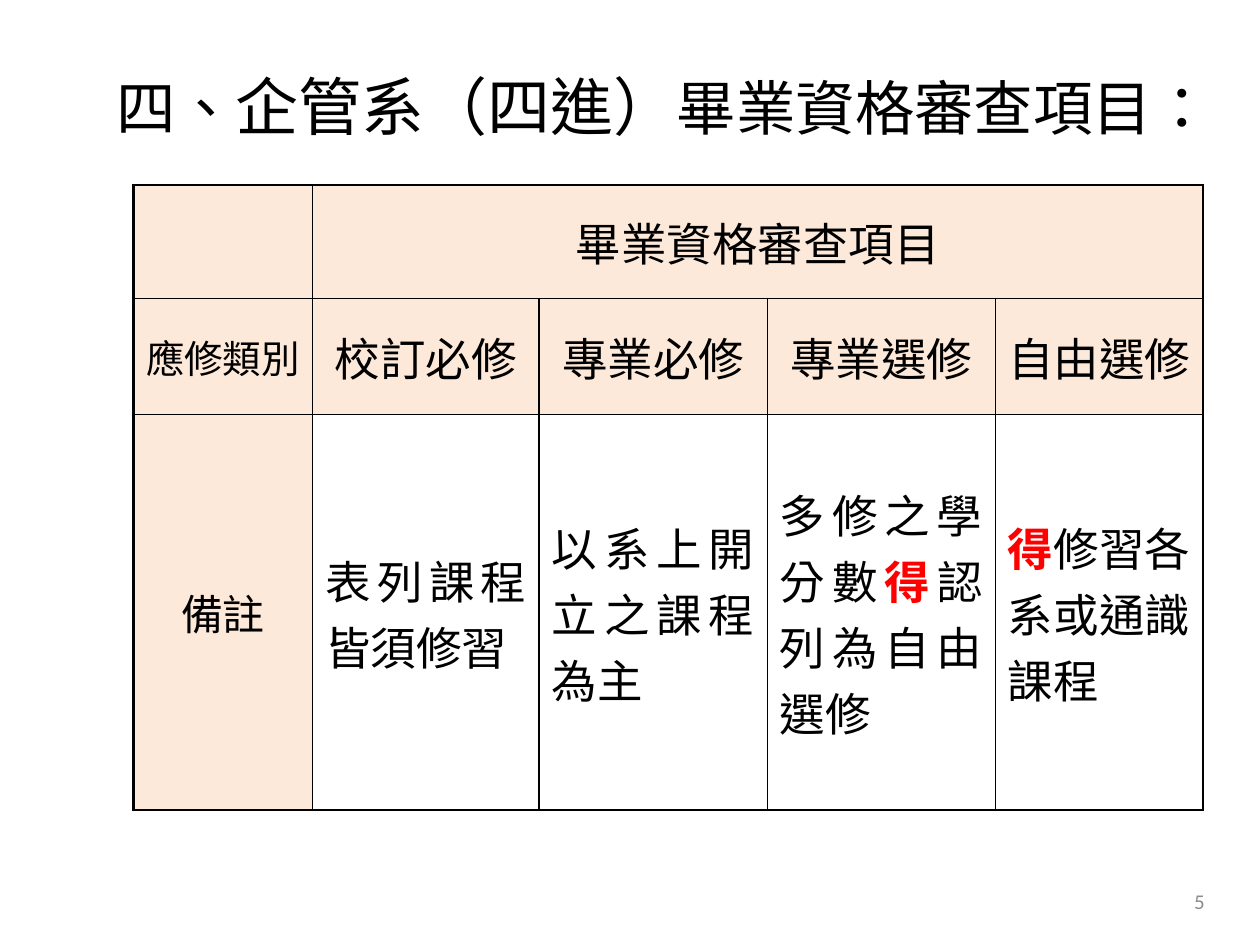
from dataclasses import dataclass

from lxml import etree
from pptx import Presentation
from pptx.dml.color import RGBColor
from pptx.enum.lang import MSO_LANGUAGE_ID
from pptx.enum.text import MSO_ANCHOR, PP_ALIGN
from pptx.oxml.ns import qn
from pptx.util import Inches, Pt

LEFT, CENTER, RIGHT, JUSTIFY = (
    PP_ALIGN.LEFT, PP_ALIGN.CENTER, PP_ALIGN.RIGHT, PP_ALIGN.JUSTIFY)
MIDDLE = MSO_ANCHOR.MIDDLE
ZH_TW = MSO_LANGUAGE_ID.TRADITIONAL_CHINESE


@dataclass(frozen=True)
class Theme:
    ink: str = "000000"
    accent: str = "FF0000"
    muted: str = "8C8C8C"
    header_fill: str = "FDE9D9"
    cjk_font: str = "Noto Sans CJK JP"
    table_font: str = "Times New Roman"
    number_font: str = "Calibri"
    title: int = 34
    title_large: int = 36
    body: int = 26
    note: int = 24
    label: int = 22
    number: int = 12
    inner_line: float = 1
    outer_line: float = 1.5


THEME = Theme()


@dataclass(frozen=True)
class Run:
    text: str
    size: int = THEME.body
    font: str = THEME.table_font
    color: str = THEME.ink
    bold: bool = False


@dataclass(frozen=True)
class Cell:
    runs: tuple[Run, ...] = ()
    align: PP_ALIGN = CENTER
    filled: bool = True
    span: int = 1


def header(text: str, size: int = THEME.body, span: int = 1) -> Cell:
    return Cell((Run(text, size),), span=span)


def remark(*runs: Run) -> Cell:
    return Cell(runs, JUSTIFY, filled=False)


MAY = Run("得", color=THEME.accent, bold=True)
COLUMNS = (1.42, 1.8, 1.81, 1.81, 1.65)
ROWS = (0.9, 0.92, 3.14)
CELLS = (
    (Cell(), header("畢業資格審查項目", span=4)),
    (header("應修類別", THEME.label), header("校訂必修"), header("專業必修"),
     header("專業選修"), header("自由選修")),
    (header("備註", THEME.note),
     remark(Run("表列課程皆須修習")),
     remark(Run("以系上開立之課程為主")),
     remark(Run("多修之學分數"), MAY, Run("認列為自由選修")),
     remark(MAY, Run("修習各系或通識課程"))),
)
TITLE = (
    Run("四、", THEME.title, THEME.cjk_font),
    Run("企管系（四進）", THEME.title_large, THEME.cjk_font),
    Run("畢業資格審查項目：", THEME.title, THEME.cjk_font),
)


def write(p, runs: tuple[Run, ...], align: PP_ALIGN) -> None:
    p.alignment = align
    for run in runs:
        r = p.add_run()
        r.text = run.text
        r.font.size = Pt(run.size)
        r.font.name = run.font
        r.font.bold = run.bold
        r.font.color.rgb = RGBColor.from_string(run.color)
        r.font.language_id = ZH_TW
        latin = r.font._element.find(qn("a:latin"))
        ea = etree.Element(qn("a:ea"), typeface=THEME.cjk_font)
        latin.addnext(ea)


def add_text(slide, box: tuple[float, ...], runs: tuple[Run, ...],
             align: PP_ALIGN) -> None:
    tf = slide.shapes.add_textbox(*map(Inches, box)).text_frame
    tf.word_wrap = True
    tf.vertical_anchor = MIDDLE
    tf.margin_right = 0 if align == LEFT else Inches(0.1)
    write(tf.paragraphs[0], runs, align)


def set_borders(cell, row: int, col: int, span: int) -> None:
    """Draw thin inner lines and a thicker line round the table."""
    outer = {
        "L": col == 0,
        "R": col + span == len(COLUMNS),
        "T": row == 0,
        "B": row == len(ROWS) - 1,
    }
    tc_pr = cell._tc.get_or_add_tcPr()
    for i, (side, is_outer) in enumerate(outer.items()):
        width = THEME.outer_line if is_outer else THEME.inner_line
        ln = etree.Element(qn(f"a:ln{side}"), w=str(int(Pt(width))))
        fill = etree.SubElement(ln, qn("a:solidFill"))
        etree.SubElement(fill, qn("a:srgbClr"), val=THEME.ink)
        tc_pr.insert(i, ln)


def add_review_table(slide, left: float, top: float) -> None:
    table = slide.shapes.add_table(
        len(ROWS), len(COLUMNS), Inches(left), Inches(top),
        Inches(sum(COLUMNS)), Inches(sum(ROWS))).table
    for column, width in zip(table.columns, COLUMNS):
        column.width = Inches(width)
    for row, height in zip(table.rows, ROWS):
        row.height = Inches(height)
    for i, row_cells in enumerate(CELLS):
        for j, item in enumerate(row_cells):
            cell = table.cell(i, j)
            if item.span > 1:
                cell.merge(table.cell(i, j + item.span - 1))
            cell.vertical_anchor = MIDDLE
            if item.filled:
                cell.fill.solid()
                cell.fill.fore_color.rgb = RGBColor.from_string(THEME.header_fill)
            else:
                cell.fill.background()
            set_borders(cell, i, j, item.span)
            write(cell.text_frame.paragraphs[0], item.runs, item.align)


def main() -> None:
    prs = Presentation()
    prs.slide_width, prs.slide_height = Inches(10), Inches(7.5)
    slide = prs.slides.add_slide(prs.slide_layouts[6])
    page_number = Run("5", THEME.number, THEME.number_font, THEME.muted)
    add_text(slide, (7.33, 6.95, 2.33, 0.4), (page_number,), RIGHT)
    add_review_table(slide, 1.06, 1.47)
    add_text(slide, (0.83, 0.29, 8.83, 1.09), TITLE, LEFT)
    prs.save("out.pptx")


if __name__ == "__main__":
    main()
